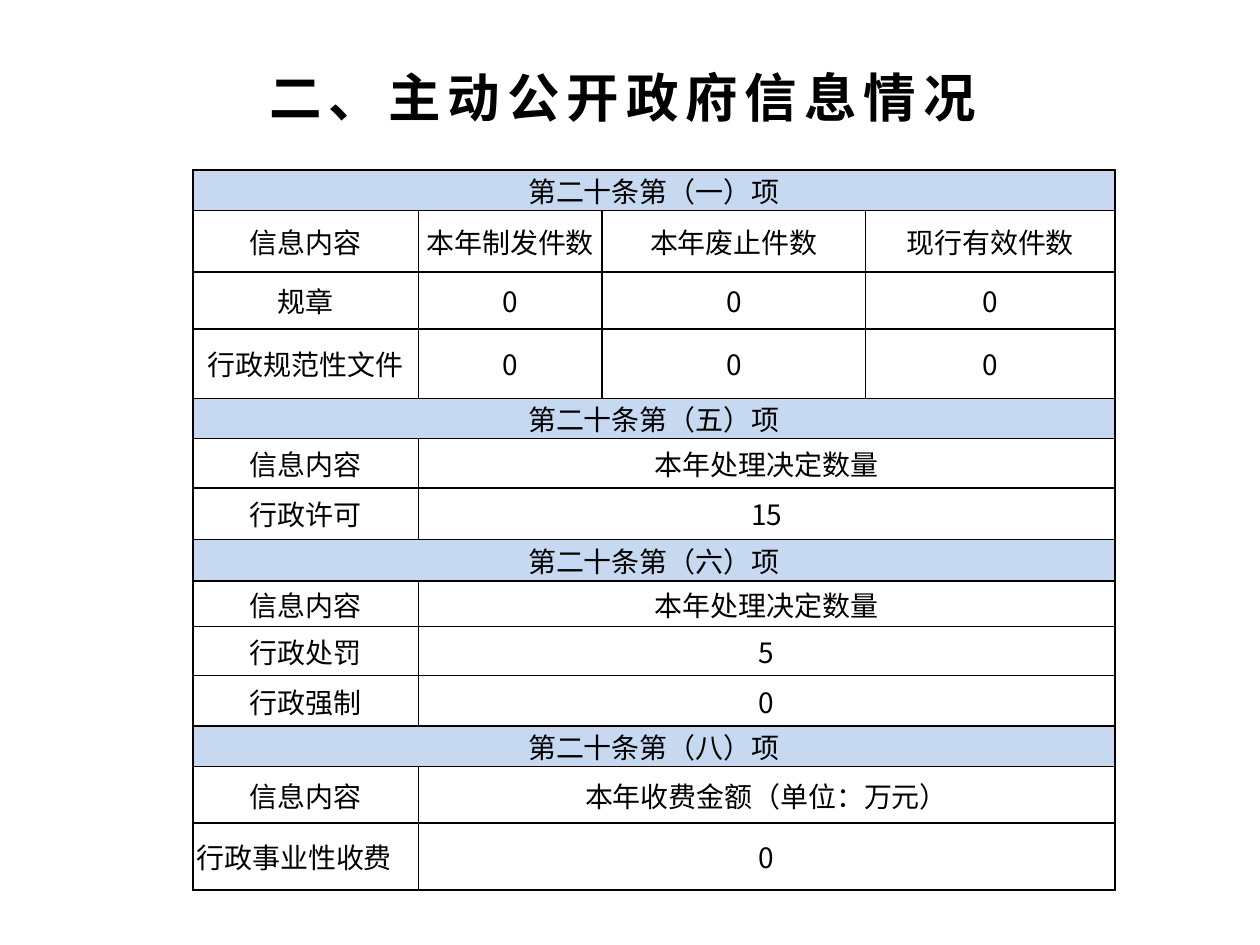
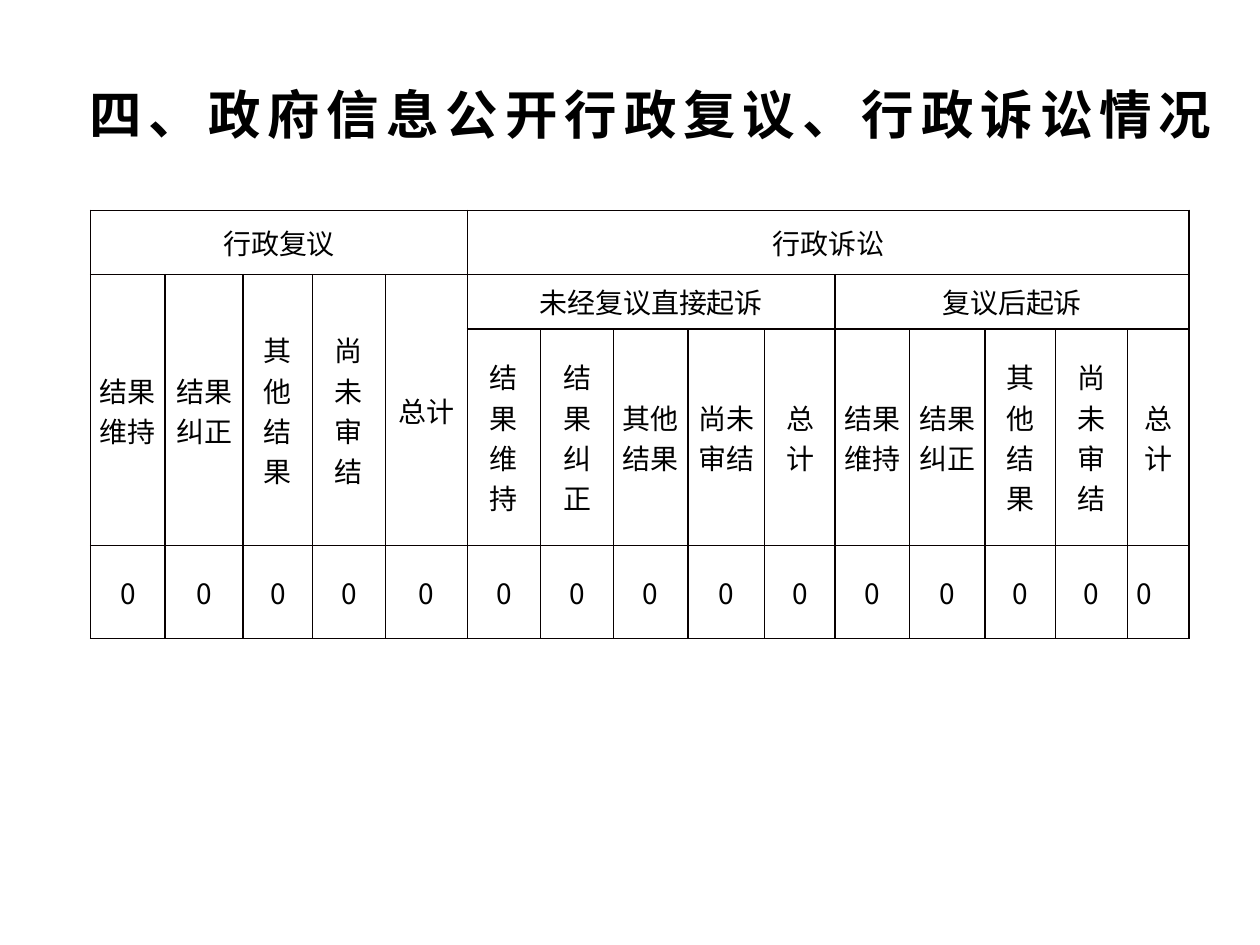
from dataclasses import dataclass

from lxml import etree
from pptx import Presentation
from pptx import util as u
from pptx.dml.color import RGBColor
from pptx.enum import text
from pptx.oxml import ns


@dataclass(frozen=True)
class Theme:
    """Colours, type sizes and slide size shared by both slides."""
    face: str = "Noto Sans CJK SC"
    ink: str = "000000"
    rule: str = "080000"
    band: str = "C6D9F1"
    title_size: int = 30
    title_spacing: int = 4
    body_size: int = 16
    width: int = u.Inches(10)
    height: int = u.Inches(7.5)


THEME = Theme()
LEFT, UP = "<", "^"
OUTCOMES = ["结果维持", "结果纠正", "其他结果", "尚未审结", "总计"]


def apply(target, values):
    """Set each named attribute of the target."""
    for name, value in values.items():
        setattr(target, name, value)


def place(left, top, width, height):
    """Turn percentages of the slide into lengths."""
    sides = (THEME.width, THEME.height) * 2
    return [round(side * share / 100)
            for side, share in zip(sides, (left, top, width, height))]


def divide(total, weights):
    """Share a length out by weight."""
    return [round(total * weight / sum(weights)) for weight in weights]


def write(frame, wording, size, bold=False, spacing=0, align=text.PP_ALIGN.LEFT):
    """Write one paragraph in the theme face."""
    paragraph = frame.paragraphs[0]
    paragraph.alignment = align
    run = paragraph.add_run()
    run.text = wording
    apply(run.font, {"size": u.Pt(size), "bold": bold, "name": THEME.face})
    run.font.color.rgb = RGBColor.from_string(THEME.ink)
    properties = run.font._element
    etree.SubElement(properties, ns.qn("a:ea"), typeface=THEME.face)
    if spacing:
        properties.set("spc", str(spacing * 100))


def add_title(slide, wording, box):
    """Add a spaced bold heading."""
    frame = slide.shapes.add_textbox(*place(*box)).text_frame
    apply(frame, {"word_wrap": True,
                  "auto_size": text.MSO_AUTO_SIZE.SHAPE_TO_FIT_TEXT})
    write(frame, wording, THEME.title_size, True, THEME.title_spacing)


def rule_cell(cell):
    """Draw a thin line on all four sides of a cell."""
    properties = cell._tc.get_or_add_tcPr()
    for side in "LRTB":
        line = etree.SubElement(properties, ns.qn(f"a:ln{side}"), w=str(u.Pt(1)))
        fill = etree.SubElement(line, ns.qn("a:solidFill"))
        etree.SubElement(fill, ns.qn("a:srgbClr"), val=THEME.rule)


def merge_spans(table, rows):
    """Join each worded cell with the marked cells beside and below it."""
    for r, row in enumerate(rows):
        for c, wording in enumerate(row):
            if wording in (LEFT, UP):
                continue
            right, bottom = c, r
            while right + 1 < len(row) and row[right + 1] == LEFT:
                right += 1
            while bottom + 1 < len(rows) and rows[bottom + 1][c] == UP:
                bottom += 1
            if (right, bottom) != (c, r):
                table.cell(r, c).merge(table.cell(bottom, right))


def add_grid(slide, rows, box, columns, heights, inset, banded=()):
    """Add a ruled table whose last row may hold one left-aligned cell."""
    left, top, width, height = place(*box)
    table = slide.shapes.add_table(
        len(rows), len(columns), left, top, width, height).table
    apply(table, {"first_row": False, "horz_banding": False})
    for column, length in zip(table.columns, divide(width, columns)):
        column.width = length
    for row, length in zip(table.rows, divide(height, heights)):
        row.height = length
    margins = {"margin_left": u.Inches(inset), "margin_right": u.Inches(inset),
               "margin_top": 0, "margin_bottom": 0,
               "vertical_anchor": text.MSO_ANCHOR.MIDDLE}
    for r, row in enumerate(rows):
        for c, wording in enumerate(row):
            cell = table.cell(r, c)
            apply(cell, margins)
            rule_cell(cell)
            if r in banded:
                cell.fill.solid()
                cell.fill.fore_color.rgb = RGBColor.from_string(THEME.band)
            else:
                cell.fill.background()
            if wording not in (LEFT, UP):
                write(cell.text_frame, wording, THEME.body_size,
                      align=text.PP_ALIGN.CENTER)
    merge_spans(table, rows)
    return table


def build_disclosure(slide):
    """Build the table of proactively disclosed information."""
    entries = [
        ["第二十条第（一）项"],
        ["信息内容", "本年制发件数", "本年废止件数", "现行有效件数"],
        ["规章", "0", "0", "0"],
        ["行政规范性文件", "0", "0", "0"],
        ["第二十条第（五）项"],
        ["信息内容", "本年处理决定数量"],
        ["行政许可", "15"],
        ["第二十条第（六）项"],
        ["信息内容", "本年处理决定数量"],
        ["行政处罚", "5"],
        ["行政强制", "0"],
        ["第二十条第（八）项"],
        ["信息内容", "本年收费金额（单位：万元）"],
        ["行政事业性收费", "0"],
    ]
    columns = [179, 146, 209, 198]
    heights = [31, 49, 45, 55, 31, 39, 41, 33, 36, 39, 40, 31, 45, 53]
    rows = [entry + [LEFT] * (len(columns) - len(entry)) for entry in entries]
    sections = [r for r, entry in enumerate(entries) if len(entry) == 1]
    table = add_grid(slide, rows, (15.3, 18, 73.2, 75.8), columns, heights,
                     0.03, sections)
    fees = table.cell(len(rows) - 1, 0).text_frame.paragraphs[0]
    fees.alignment = text.PP_ALIGN.LEFT
    add_title(slide, "二、主动公开政府信息情况", (20.4, 6.27, 65.9, 8))


def build_litigation(slide):
    """Build the table of reconsiderations and lawsuits."""
    add_title(slide, "四、政府信息公开行政复议、行政诉讼情况", (6.1, 8, 93.1, 8))
    group = len(OUTCOMES)
    rest = [LEFT] * (group - 1)
    rows = [
        ["行政复议", *rest, "行政诉讼", *rest, *[LEFT] * group],
        [*OUTCOMES, "未经复议直接起诉", *rest, "复议后起诉", *rest],
        [UP] * group + OUTCOMES * 2,
        ["0"] * group * 3,
    ]
    columns = [59, 62, 55, 58, 65, 58, 58, 59, 61, 56, 59, 60, 56, 57, 49]
    table = add_grid(slide, rows, (7.2, 22.27, 87.2, 45.33), columns,
                     [51, 43, 172, 74], 0.07)
    last_total = table.cell(len(rows) - 1, len(columns) - 1)
    last_total.text_frame.paragraphs[0].alignment = text.PP_ALIGN.LEFT


def main():
    """Build and save the presentation."""
    deck = Presentation()
    apply(deck, {"slide_width": THEME.width, "slide_height": THEME.height})
    for build in (build_disclosure, build_litigation):
        build(deck.slides.add_slide(deck.slide_layouts[6]))
    deck.save("out.pptx")


if __name__ == "__main__":
    main()
